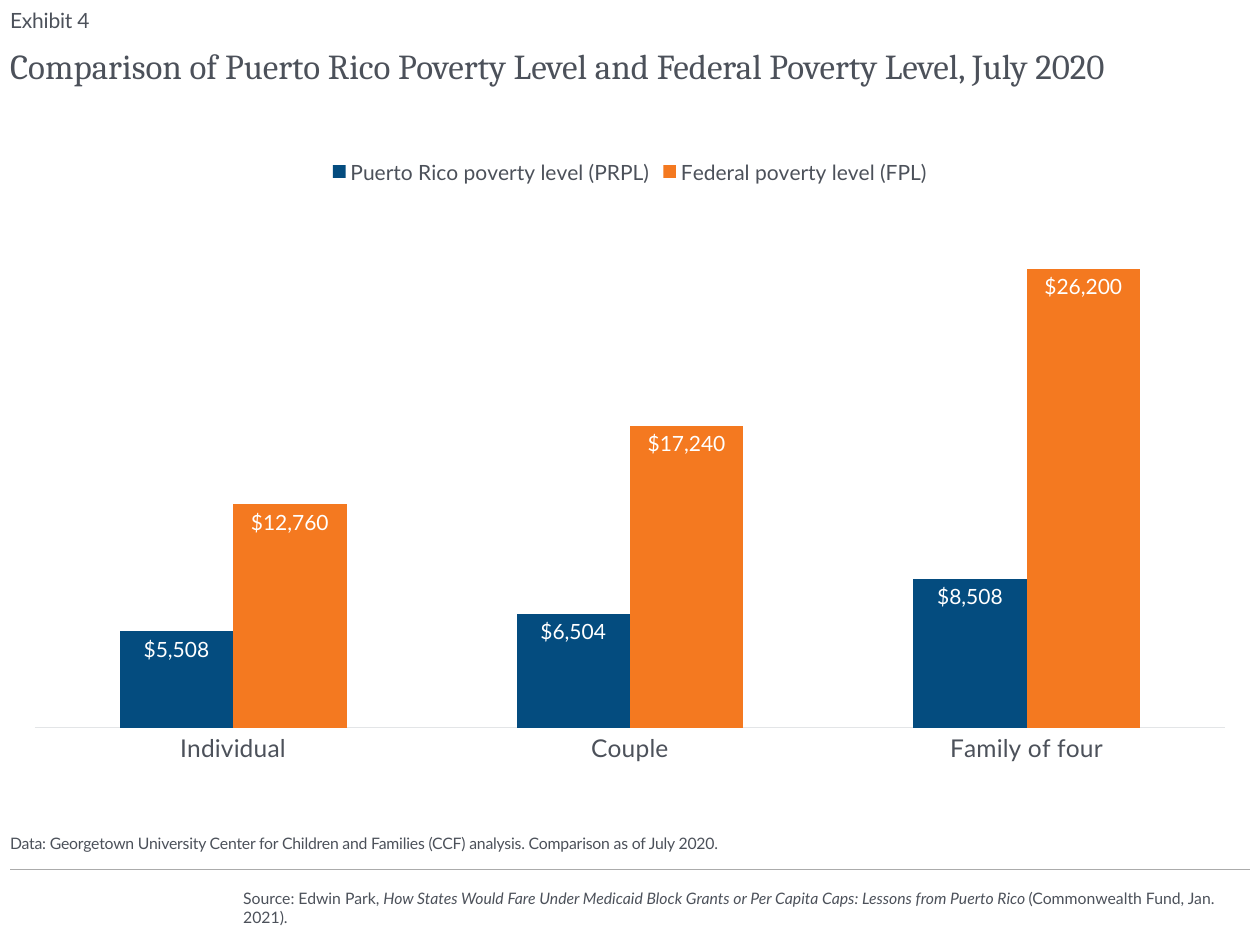
from lxml.etree import SubElement
from pptx import Presentation
from pptx.chart.data import CategoryChartData
from pptx.dml.color import RGBColor
from pptx.enum.chart import XL_CHART_TYPE, XL_LABEL_POSITION, XL_LEGEND_POSITION, XL_TICK_MARK
from pptx.enum.shapes import MSO_CONNECTOR
from pptx.enum.text import MSO_ANCHOR
from pptx.oxml.ns import qn
from pptx.util import Inches, Pt

TEXT = RGBColor(0x4C, 0x51, 0x5A)
RULE = RGBColor(0xAB, 0xAB, 0xAB)
AXIS = RGBColor(0xE3, 0xE5, 0xE7)
WHITE = RGBColor(0xFF, 0xFF, 0xFF)
BLUE = RGBColor(0x04, 0x4C, 0x7F)
ORANGE = RGBColor(0xF4, 0x79, 0x20)

SLIDE_WIDTH, SLIDE_HEIGHT = 10, 7.5
MARGIN = 0.08
CONTENT_WIDTH = SLIDE_WIDTH - 2 * MARGIN
SOURCE_LEFT = 1.93
BODY_FONT, TITLE_FONT = "Lato", "Cambria"
DOLLARS = '"$"#,##0'

CATEGORIES = ["Individual", "Couple", "Family of four"]
SERIES = [
    ("Puerto Rico poverty level (PRPL)", [5508, 6504, 8508], BLUE),
    ("Federal poverty level (FPL)", [12760, 17240, 26200], ORANGE),
]
# Share of the chart's width or height
PLOT_AREA = {"x": 0.02, "y": 0.09, "w": 0.96, "h": 0.83}


def style_font(font, size, color=TEXT, name=BODY_FONT):
    font.size = Pt(size)
    font.name = name
    font.color.rgb = color


def add_text(slide, top, height, runs, size, left=MARGIN, anchor=MSO_ANCHOR.BOTTOM,
             name=BODY_FONT, line_spacing=None, tracking=None):
    """Add one paragraph that reaches the right margin; runs are (text, italic) pairs."""
    width = SLIDE_WIDTH - MARGIN - left
    box = slide.shapes.add_textbox(Inches(left), Inches(top), Inches(width), Inches(height))
    frame = box.text_frame
    frame.word_wrap = True
    frame.vertical_anchor = anchor
    frame.margin_left = frame.margin_right = frame.margin_top = frame.margin_bottom = 0
    paragraph = frame.paragraphs[0]
    if line_spacing:
        paragraph.line_spacing = line_spacing
    for text, italic in runs:
        run = paragraph.add_run()
        run.text = text
        style_font(run.font, size, name=name)
        run.font.italic = italic
        if tracking:
            run.font._element.set("spc", str(round(tracking * 100)))


def add_rule(slide, top):
    rule = slide.shapes.add_connector(
        MSO_CONNECTOR.STRAIGHT, Inches(SLIDE_WIDTH - MARGIN), Inches(top),
        Inches(MARGIN), Inches(top))
    rule.line.color.rgb = RULE
    rule.line.width = Pt(0.75)
    SubElement(rule._element.spPr, qn("a:effectLst"))


def place_plot_area(chart):
    """Fix the inner plot area, which python-pptx otherwise leaves automatic."""
    plot_area = chart._chartSpace.chart.plotArea
    layout = plot_area.find(qn("c:layout"))
    if layout is None:
        layout = SubElement(plot_area, qn("c:layout"))
        plot_area.insert(0, layout)
    manual = SubElement(layout, qn("c:manualLayout"))
    settings = {"layoutTarget": "inner", "xMode": "edge", "yMode": "edge", **PLOT_AREA}
    for tag, value in settings.items():
        SubElement(manual, qn(f"c:{tag}")).set("val", str(value))


def add_poverty_chart(slide, top, height):
    data = CategoryChartData(number_format=DOLLARS)
    data.categories = CATEGORIES
    for name, values, _ in SERIES:
        data.add_series(name, values)
    chart = slide.shapes.add_chart(
        XL_CHART_TYPE.COLUMN_CLUSTERED, Inches(MARGIN), Inches(top),
        Inches(CONTENT_WIDTH), Inches(height), data).chart
    chart.has_title = False
    style_font(chart.font, 10)
    place_plot_area(chart)

    # Legend
    chart.has_legend = True
    chart.legend.position = XL_LEGEND_POSITION.TOP
    chart.legend.include_in_layout = False
    style_font(chart.legend.font, 12)

    # Axes
    category_axis = chart.category_axis
    category_axis.major_tick_mark = XL_TICK_MARK.NONE
    category_axis.format.line.color.rgb = AXIS
    category_axis.format.line.width = Pt(0.75)
    style_font(category_axis.tick_labels.font, 14)
    value_axis = chart.value_axis
    value_axis.minimum_scale, value_axis.maximum_scale = 0, 30000
    value_axis.has_major_gridlines = False
    value_axis.visible = False

    # Columns and their labels
    plot = chart.plots[0]
    plot.gap_width = 150
    plot.overlap = 0
    plot.vary_by_categories = False
    for series, (_, _, color) in zip(plot.series, SERIES):
        series.format.fill.solid()
        series.format.fill.fore_color.rgb = color
        labels = series.data_labels
        labels.show_value = True
        labels.position = XL_LABEL_POSITION.INSIDE_END
        labels.number_format = DOLLARS
        labels.number_format_is_linked = False
        style_font(labels.font, 12, WHITE)


def main():
    presentation = Presentation()
    presentation.slide_width = Inches(SLIDE_WIDTH)
    presentation.slide_height = Inches(SLIDE_HEIGHT)
    slide = presentation.slides.add_slide(presentation.slide_layouts[6])

    # Heading
    add_text(slide, 0.01, 0.25, [("Exhibit 4", False)], 12, tracking=-0.1)
    add_text(slide, 0.32, 0.83, [
        ("Comparison of Puerto Rico Poverty Level and Federal Poverty Level, July 2020", False),
    ], 20, anchor=MSO_ANCHOR.TOP, name=TITLE_FONT, line_spacing=1.1)

    add_poverty_chart(slide, 1.15, 5.03)

    # Data note, rule and source
    add_text(slide, 6.23, 0.54, [
        ("Data: Georgetown University Center for Children and Families (CCF) analysis. "
         "Comparison as of July 2020.", False),
    ], 9, tracking=-0.1)
    add_rule(slide, 6.9)
    add_text(slide, 6.98, 0.45, [
        ("Source: Edwin Park, ", False),
        ("How States Would Fare Under Medicaid Block Grants or Per Capita Caps: "
         "Lessons from Puerto Rico ", True),
        ("(Commonwealth Fund, Jan. 2021).", False),
    ], 9, left=SOURCE_LEFT, anchor=MSO_ANCHOR.MIDDLE)

    presentation.save("out.pptx")


if __name__ == "__main__":
    main()
